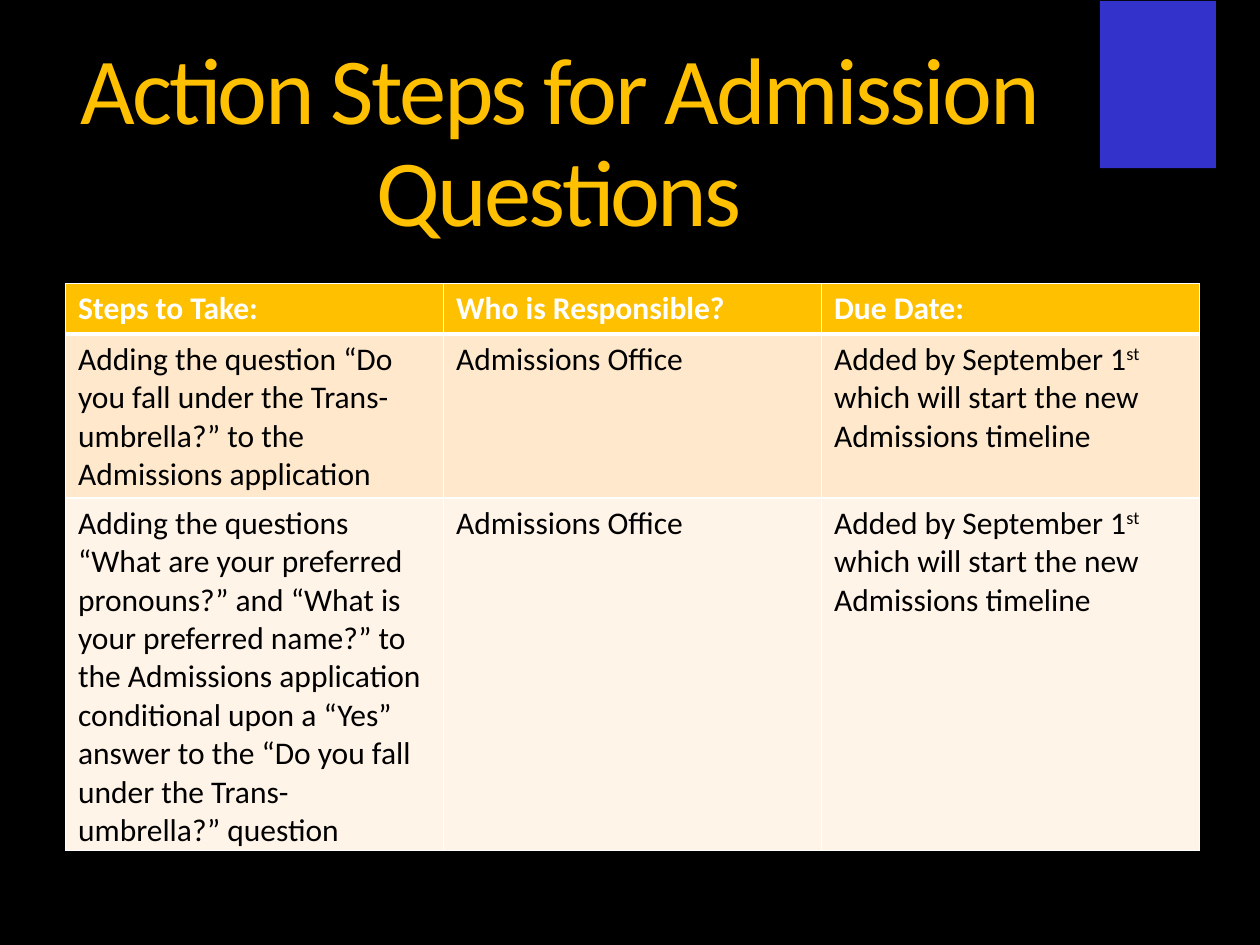
from typing import NamedTuple

from lxml.etree import SubElement
from pptx import Presentation
from pptx.dml.color import RGBColor
from pptx.enum.shapes import MSO_SHAPE as Shape
from pptx.enum.text import MSO_ANCHOR as Anchor, PP_ALIGN as Align
from pptx.oxml.ns import qn
from pptx.util import Inches, Pt

W, H = 10, 7.5
FONT = "Calibri"
BLACK, WHITE, GOLD, BLUE = "000000", "FFFFFF", "FFC000", "3333CC"


class Box(NamedTuple):
    """A rectangle in shares of the slide's width and height."""
    x: float
    y: float
    w: float
    h: float

    def emu(self) -> tuple:
        return (Inches(self.x * W), Inches(self.y * H),
                Inches(self.w * W), Inches(self.h * H))


class Row(NamedTuple):
    height: float
    fill: str
    color: str
    bold: bool
    cells: tuple


TITLE = Box(0.052, 0.044, 0.783, 0.219)
TABLE = Box(0.052, 0.3, 0.9, 0.528)
ACCENT = Box(0.873, 0.001, 0.092, 0.177)

# A cell is a tuple of runs; the run "st" is raised
OFFICE = ("Admissions Office",)
DUE = ("Added by September 1", "st", " which will start the new Admissions timeline")
ROWS = (
    Row(0.35, GOLD, WHITE, True,
        (("Steps to Take:",), ("Who is Responsible?",), ("Due Date:",))),
    Row(0.88, "FFE8CC", BLACK, False,
        (("Adding the question “Do you fall under the Trans-umbrella?” "
          "to the Admissions application",), OFFICE, DUE)),
    Row(2.73, "FFF4E7", BLACK, False,
        (("Adding the questions “What are your preferred pronouns?” and "
          "“What is your preferred name?” to the Admissions application "
          "conditional upon a “Yes” answer to the “Do you fall under the "
          "Trans-umbrella?” question",), OFFICE, DUE)),
)


def rgb(color: str) -> RGBColor:
    return RGBColor.from_string(color)


def paint(obj, color: str) -> None:
    obj.fill.solid()
    obj.fill.fore_color.rgb = rgb(color)


def add_text(p, text: str, *, size: float, color: str, bold: bool = False,
             spacing: float = 0, raised: bool = False) -> None:
    r = p.add_run()
    r.text = text
    r.font.name, r.font.size, r.font.bold = FONT, Pt(size), bold
    r.font.color.rgb = rgb(color)
    props = r.font._element
    if spacing:
        props.set("spc", str(int(spacing * 100)))
    if raised:
        props.set("baseline", "30000")


def add_borders(cell, top: float, bottom: float) -> None:
    props = cell._tc.get_or_add_tcPr()
    for side, width in (("L", 1), ("R", 1), ("T", top), ("B", bottom)):
        ln = SubElement(props, qn(f"a:ln{side}"), w=str(Pt(width)))
        SubElement(SubElement(ln, qn("a:solidFill")), qn("a:srgbClr"), val=WHITE)


def add_title(slide, box: Box) -> None:
    tf = slide.shapes.add_textbox(*box.emu()).text_frame
    tf.word_wrap = True
    tf.vertical_anchor = Anchor.MIDDLE
    tf.margin_left = tf.margin_right = tf.margin_top = tf.margin_bottom = 0
    p = tf.paragraphs[0]
    p.alignment, p.line_spacing = Align.CENTER, 0.9
    add_text(p, "Action Steps for Admission Questions",
             size=54, color=GOLD, spacing=-1.5)


def add_steps(slide, box: Box, rows: tuple) -> None:
    columns = len(rows[0].cells)
    table = slide.shapes.add_table(len(rows), columns, *box.emu()).table
    for column in table.columns:
        column.width = Inches(box.w * W / columns)
    for i, row in enumerate(rows):
        table.rows[i].height = Inches(row.height)
        for j, runs in enumerate(row.cells):
            cell = table.cell(i, j)
            # A heavier rule separates the header from the body
            add_borders(cell, top=3 if i == 1 else 1, bottom=3 if i == 0 else 1)
            paint(cell, row.fill)
            for text in runs:
                add_text(cell.text_frame.paragraphs[0], text, size=18,
                         color=row.color, bold=row.bold, raised=text == "st")


def add_accent(slide, box: Box) -> None:
    sp = slide.shapes.add_shape(Shape.RECTANGLE, *box.emu())
    sp.shadow.inherit = False
    paint(sp, BLUE)
    sp.line.fill.background()


def main() -> None:
    prs = Presentation()
    prs.slide_width, prs.slide_height = Inches(W), Inches(H)
    s = prs.slides.add_slide(prs.slide_layouts[6])
    paint(s.background, BLACK)
    add_title(s, TITLE)
    add_steps(s, TABLE, ROWS)
    add_accent(s, ACCENT)
    prs.save("out.pptx")


if __name__ == "__main__":
    main()
